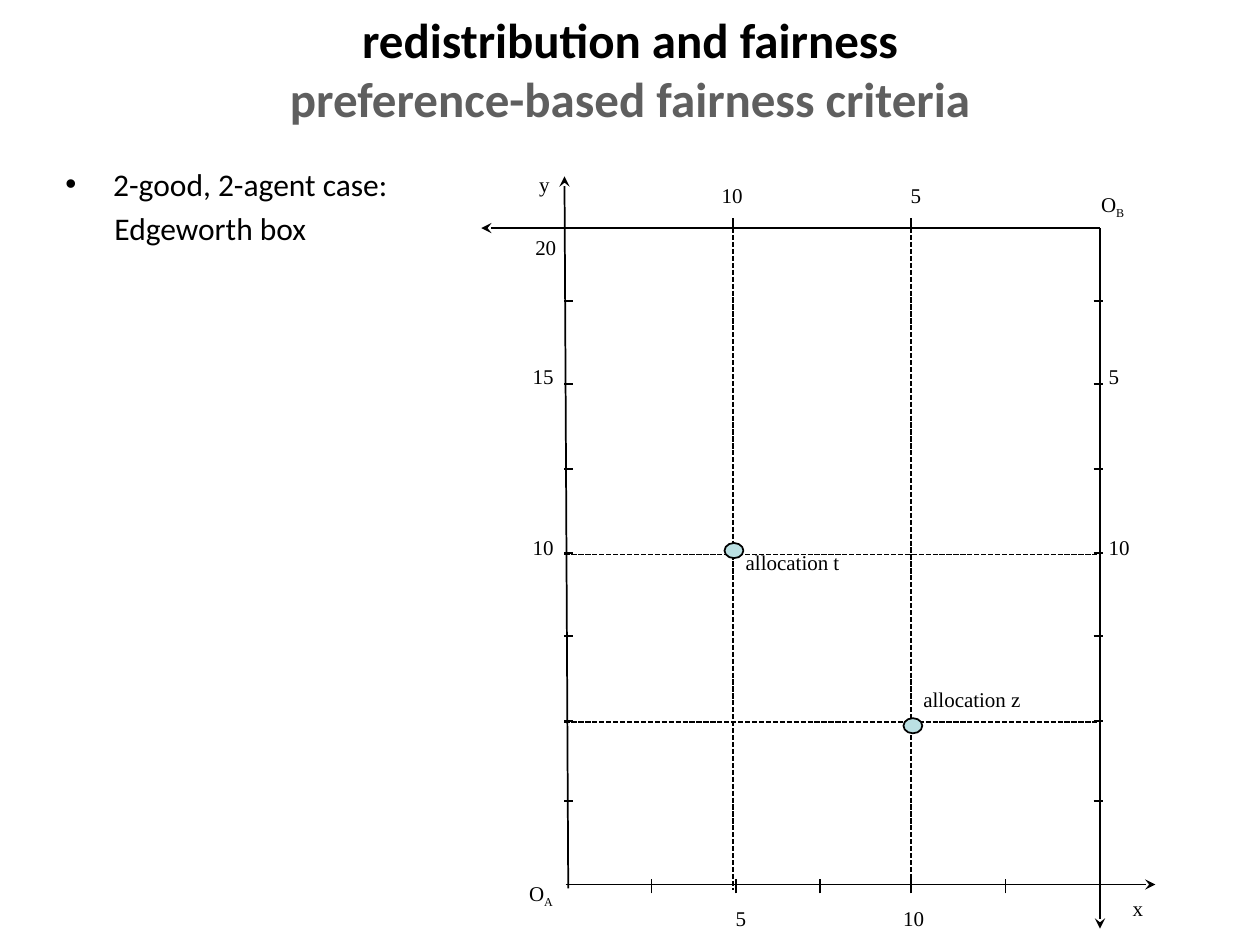
from lxml import etree
from pptx import Presentation
from pptx.dml.color import RGBColor
from pptx.enum.dml import MSO_LINE
from pptx.enum.shapes import MSO_CONNECTOR, MSO_SHAPE
from pptx.enum.text import MSO_ANCHOR, PP_ALIGN
from pptx.oxml.ns import qn
from pptx.util import Inches, Pt

STRAIGHT = MSO_CONNECTOR.STRAIGHT
DASHED = MSO_LINE.SQUARE_DOT
NODE = MSO_SHAPE.FLOWCHART_CONNECTOR
MIDDLE = MSO_ANCHOR.MIDDLE
CENTER = PP_ALIGN.CENTER
color = RGBColor.from_string
BLACK, GREY, PALE_BLUE = "000000", "5F5F5F", "BBE0E3"


def add_line(x1, y1, x2, y2, dash=None, arrow=False):
    line = page.shapes.add_connector(STRAIGHT, Inches(x1), Inches(y1), Inches(x2), Inches(y2))
    line.line.color.rgb = color(BLACK)
    line.line.width = Pt(1)
    if dash:
        line.line.dash_style = dash
    if arrow:
        etree.SubElement(line.line._get_or_add_ln(), qn("a:tailEnd"), type="stealth")
    etree.SubElement(line._element.spPr, qn("a:effectLst"))


def add_label(text, left, top, width, subscript=""):
    box = page.shapes.add_textbox(Inches(left), Inches(top), Inches(width), Inches(0.3))
    box.text_frame.word_wrap = False
    para = box.text_frame.paragraphs[0]
    para.font.name = "Times New Roman"
    para.font.size = Pt(12)
    para.font.color.rgb = color(BLACK)
    para.add_run().text = text
    if subscript:
        span = para.add_run()
        span.text = subscript
        span.font._element.set("baseline", "-25000")


deck = Presentation()
deck.slide_width, deck.slide_height = Inches(10), Inches(7.5)
page = deck.slides.add_slide(deck.slide_layouts[6])

title = page.shapes.add_textbox(Inches(0.5), Inches(-0.08), Inches(9), Inches(1.25))
title.text_frame.word_wrap = True
title.text_frame.vertical_anchor = MIDDLE
para = title.text_frame.paragraphs[0]
para.alignment = CENTER
para.font.name = "Calibri"
para.font.size = Pt(28)
para.font.bold = True
span = para.add_run()
span.text = "redistribution and fairness"
span.font.color.rgb = color(BLACK)
para.add_line_break()
span = para.add_run()
span.text = "preference-based fairness criteria"
span.font.color.rgb = color(GREY)

body = page.shapes.add_textbox(Inches(0.42), Inches(1.26), Inches(5), Inches(0.77))
body.text_frame.word_wrap = True
body.text_frame.text = "2-good, 2-agent case:\nEdgeworth box"
for para, margin, indent in zip(body.text_frame.paragraphs, (0.38, 0.39), (-0.38, 0)):
    para.font.name = "Calibri"
    para.font.size = Pt(18)
    para.font.color.rgb = color(BLACK)
    para.space_before = Pt(3.6)
    properties = para._p.get_or_add_pPr()
    properties.set("marL", str(Inches(margin)))
    properties.set("indent", str(Inches(indent)))
    if indent:
        bullet_font = etree.Element(qn("a:buFont"), typeface="Arial")
        bullet = etree.Element(qn("a:buChar"), char="•")
        properties.find(qn("a:spcBef")).addnext(bullet_font)
        bullet_font.addnext(bullet)

add_line(4.49, 7.02, 9.17, 7.02, arrow=True)
add_line(4.51, 7.05, 4.48, 1.4, arrow=True)
add_line(8.73, 1.81, 3.82, 1.81, arrow=True)
add_line(8.73, 1.81, 8.73, 7.37, arrow=True)

for y in (2.39, 3.05, 3.72, 4.39, 5.05, 5.72, 6.36):
    for x in (4.48, 8.68):
        add_line(x, y, x + 0.07, y)
for x in (5.17, 5.84, 6.51, 7.23, 7.98):
    add_line(x, 7.09, x, 6.98)

for x, y, node_left, node_top in ((5.82, 4.4, 5.75, 4.31), (7.23, 5.73, 7.17, 5.7)):
    add_line(x, 1.84, x, 1.73)
    add_line(x, 1.81, x, 7.06, dash=DASHED)
    add_line(4.48, y, 8.73, y, dash=DASHED)
    node = page.shapes.add_shape(
        NODE, Inches(node_left), Inches(node_top), Inches(0.15), Inches(0.12)
    )
    node.shadow.inherit = False
    node.fill.solid()
    node.fill.fore_color.rgb = color(PALE_BLUE)
    node.line.color.rgb = color(BLACK)
    node.line.width = Pt(1)

for text, left, top, width in (
    ("20", 4.15, 1.81, 0.37),
    ("15", 4.13, 2.84, 0.37),
    ("10", 4.13, 4.19, 0.37),
    ("5", 8.7, 2.84, 0.28),
    ("10", 8.7, 4.19, 0.37),
    ("5", 5.74, 7.14, 0.44),
    ("10", 7.07, 7.14, 0.44),
    ("10", 5.63, 1.4, 0.44),
    ("5", 7.13, 1.4, 0.44),
    ("y", 4.18, 1.31, 0.28),
    ("x", 8.89, 7.06, 0.28),
    ("allocation t", 5.82, 4.31, 0.96),
    ("allocation z", 7.23, 5.4, 0.98),
):
    add_label(text, left, top, width)
add_label("O", 8.64, 1.47, 0.4, subscript="B")
add_label("O", 4.1, 6.94, 0.41, subscript="A")

deck.save("out.pptx")
